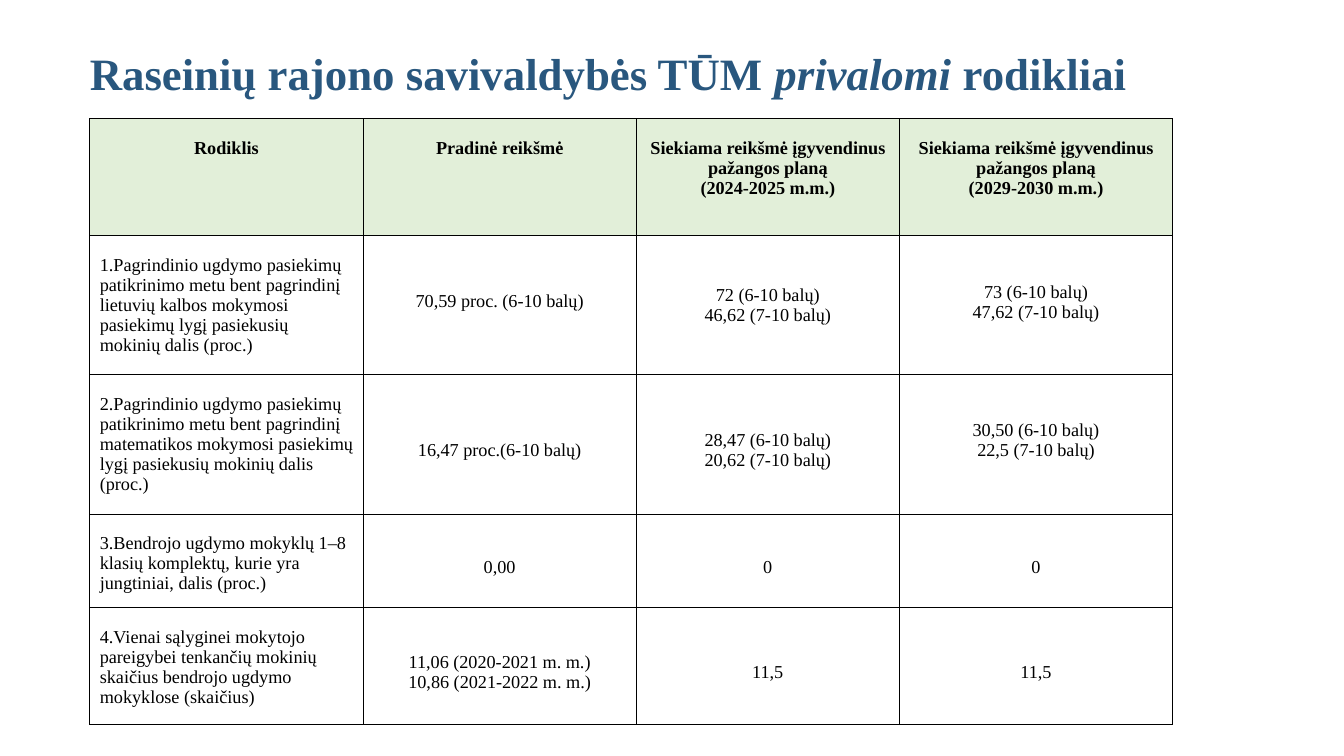
from dataclasses import dataclass

from lxml.etree import SubElement
from pptx import Presentation
from pptx.dml.color import RGBColor
from pptx.enum.text import MSO_ANCHOR as Anchor, PP_ALIGN as Align
from pptx.oxml.ns import qn
from pptx.util import Inches, Pt

FONT = "Times New Roman"
BLUE = RGBColor(0x29, 0x57, 0x7E)
BLACK = RGBColor(0, 0, 0)
GREEN = RGBColor(0xE2, 0xEF, 0xD9)

COL_WIDTHS = [2.71, 2.71, 2.61, 2.71]
ROW_HEIGHTS = [1.16, 1.38, 1.38, 0.93, 1.16]


@dataclass
class Cell:
    text: str
    top: float = 0.19
    bottom: float = 0.07


HEADER = [
    Cell("Rodiklis"),
    Cell("Pradinė reikšmė"),
    Cell("Siekiama reikšmė įgyvendinus pažangos planą\n(2024-2025 m.m.)"),
    Cell("Siekiama reikšmė įgyvendinus pažangos planą\n(2029-2030 m.m.)"),
]
INDICATORS = [
    [
        Cell("1.Pagrindinio ugdymo pasiekimų patikrinimo metu bent pagrindinį "
             "lietuvių kalbos mokymosi pasiekimų lygį pasiekusių mokinių dalis (proc.)"),
        Cell("70,59 proc. (6-10 balų)", top=0.07, bottom=0.15),
        Cell("72 (6-10 balų)\n46,62 (7-10 balų)", top=0.07),
        Cell("73 (6-10 balų)\n47,62 (7-10 balų)", top=0.07, bottom=0.13),
    ],
    [
        Cell("2.Pagrindinio ugdymo pasiekimų patikrinimo metu bent pagrindinį "
             "matematikos mokymosi pasiekimų lygį pasiekusių mokinių dalis (proc.)"),
        Cell("16,47 proc.(6-10 balų)"),
        Cell("28,47 (6-10 balų)\n20,62 (7-10 balų)"),
        Cell("30,50 (6-10 balų)\n22,5 (7-10 balų)", top=0.07, bottom=0.15),
    ],
    [
        Cell("3.Bendrojo ugdymo mokyklų 1–8 klasių komplektų, kurie yra "
             "jungtiniai, dalis (proc.)"),
        Cell("0,00"),
        Cell("0"),
        Cell("0"),
    ],
    [
        Cell("4.Vienai sąlyginei mokytojo pareigybei tenkančių mokinių skaičius "
             "bendrojo ugdymo mokyklose (skaičius)"),
        Cell("11,06 (2020-2021 m. m.)\n10,86 (2021-2022 m. m.)"),
        Cell("11,5"),
        Cell("11,5"),
    ],
]


def add_run(p, text: str, *, size: float, color: RGBColor = BLACK,
            bold: bool = False, italic: bool = False) -> None:
    r = p.add_run()
    r.text = text
    r.font.name = FONT
    r.font.size = Pt(size)
    r.font.color.rgb = color
    r.font.bold = bold
    r.font.italic = italic


def add_borders(cell) -> None:
    tc_pr = cell._tc.get_or_add_tcPr()
    for side in ("a:lnL", "a:lnR", "a:lnT", "a:lnB"):
        ln = SubElement(tc_pr, qn(side), w=str(Pt(0.75)))
        fill = SubElement(ln, qn("a:solidFill"))
        SubElement(fill, qn("a:srgbClr"), val=str(BLACK))


def fill_cell(cell, content: Cell, *, header: bool, label: bool) -> None:
    add_borders(cell)
    if header:
        cell.fill.solid()
        cell.fill.fore_color.rgb = GREEN
    else:
        cell.fill.background()
    cell.margin_left = cell.margin_right = Inches(0.1)
    cell.margin_top = Inches(content.top)
    cell.margin_bottom = Inches(content.bottom)
    cell.vertical_anchor = Anchor.TOP if header or label else Anchor.MIDDLE
    tf = cell.text_frame
    for i, line in enumerate(content.text.split("\n")):
        p = tf.add_paragraph() if i else tf.paragraphs[0]
        p.alignment = Align.LEFT if label and not header else Align.CENTER
        add_run(p, line, size=13, bold=header)


def add_title(s) -> None:
    sp = s.shapes.add_textbox(Inches(0.89), Inches(0.37), Inches(11.55), Inches(0.62))
    tf = sp.text_frame
    tf.word_wrap = True
    tf.margin_left = tf.margin_right = tf.margin_top = tf.margin_bottom = 0
    p = tf.paragraphs[0]
    p.line_spacing = 1.16
    for text, italic in (("Raseinių rajono savivaldybės TŪM ", False),
                         ("privalomi ", True), ("rodikliai", False)):
        add_run(p, text, size=32, color=BLUE, bold=True, italic=italic)


def add_indicator_table(s) -> None:
    table = s.shapes.add_table(
        len(ROW_HEIGHTS), len(COL_WIDTHS), Inches(0.89), Inches(1.18),
        Inches(sum(COL_WIDTHS)), Inches(sum(ROW_HEIGHTS))).table
    table.first_row = table.horz_banding = False
    for column, width in zip(table.columns, COL_WIDTHS):
        column.width = Inches(width)
    for row, height in zip(table.rows, ROW_HEIGHTS):
        row.height = Inches(height)
    for i, contents in enumerate([HEADER, *INDICATORS]):
        for j, content in enumerate(contents):
            fill_cell(table.cell(i, j), content, header=i == 0, label=j == 0)


def main() -> None:
    prs = Presentation()
    prs.slide_width, prs.slide_height = Inches(13.33), Inches(7.5)
    s = prs.slides.add_slide(prs.slide_layouts[6])
    add_title(s)
    add_indicator_table(s)
    prs.save("out.pptx")


if __name__ == "__main__":
    main()
